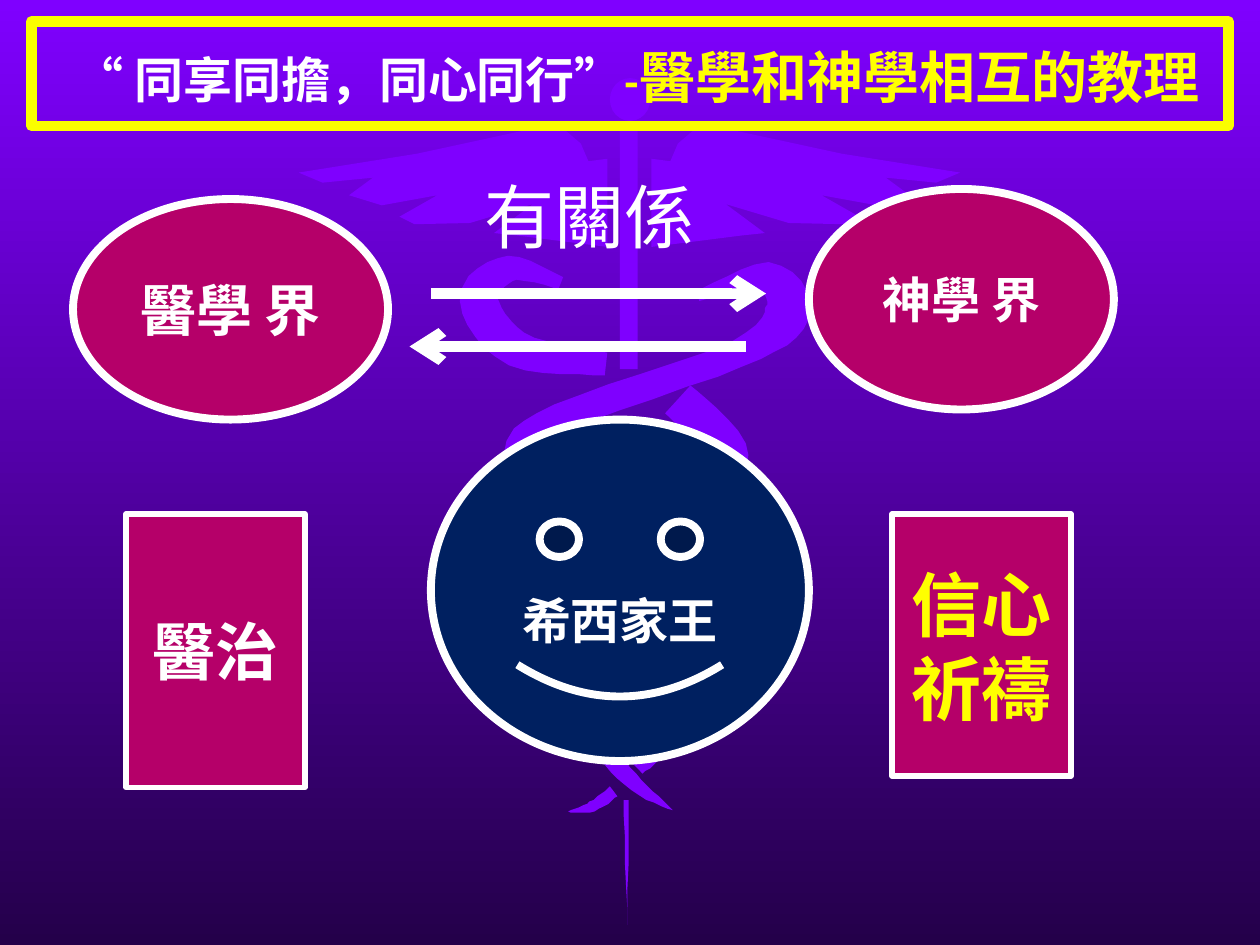
import math

import pptx
import pptx.dml.color
import pptx.enum.shapes
import pptx.enum.text
import pptx.oxml
import pptx.oxml.ns
import pptx.util
from pptx.util import Inches

FONT = "Cambria"
WHITE, YELLOW, PURPLE = "FFFFFF", "FFFF00", "7F00FF"
MAGENTA, NAVY = "B50069", "002060"
OVAL = pptx.enum.shapes.MSO_SHAPE.OVAL
RECTANGLE = pptx.enum.shapes.MSO_SHAPE.RECTANGLE
SMILEY = pptx.enum.shapes.MSO_SHAPE.SMILEY_FACE

# Emblem, in hundredths of an inch; bands are (x, y, thickness) along a centre line
STAFF = [
    [(499, 102, 15), (499, 293, 15)],
    [(499, 332, 14), (499, 390, 13)],
    [(497, 436, 14), (497, 473, 12)],
    [(497, 635, 5), (498, 734, 0)],
]
SNAKES = [
    [(445, 225, 10), (405, 213, 20), (380, 238, 30), (410, 277, 28), (481, 289, 18)],
    [(554, 235, 8), (608, 220, 24), (625, 248, 36), (585, 281, 22),
     (445, 332, 24), (417, 365, 32), (465, 401, 16)],
    [(538, 317, 30), (577, 358, 32), (560, 390, 24), (455, 430, 28),
     (436, 460, 28), (510, 505, 24), (530, 530, 20), (505, 557, 16)],
    [(478, 505, 18), (457, 530, 20), (500, 571, 18), (521, 591, 15), (506, 610, 12)],
    [(485, 573, 14), (480, 593, 16), (505, 623, 12), (534, 643, 1)],
    [(487, 628, 10), (470, 640, 8), (451, 644, 1)],
]
LEFT_WING = [
    (482, 196), (411, 187), (392, 185), (423, 162), (373, 177), (329, 178), (317, 172),
    (347, 155), (303, 163), (277, 155), (296, 141), (256, 145), (237, 137), (331, 122),
    (428, 101), (447, 102), (461, 114), (467, 128), (482, 126),
]
RIGHT_WING = [(999 - x, y) for x, y in LEFT_WING]


def color(hex_string):
    return pptx.dml.color.RGBColor.from_string(hex_string)


def style_shape(shape, fill=None, line=None, width=0):
    shape.shadow.inherit = False
    if fill:
        shape.fill.solid()
        shape.fill.fore_color.rgb = color(fill)
    else:
        shape.fill.background()
    if line:
        shape.line.color.rgb = color(line)
        shape.line.width = pptx.util.Pt(width)
    else:
        shape.line.fill.background()


def set_font(font, size, hex_string=WHITE, bold=True):
    font.name = FONT
    font.size = pptx.util.Pt(size)
    font.bold = bold
    font.color.rgb = color(hex_string)


def paint_background(slide):
    fill = slide.background.fill
    fill.gradient()
    fill.gradient_angle = 270
    for stop, hex_string, position in zip(fill.gradient_stops, (PURPLE, "24004A"), (0, 1)):
        stop.color.rgb = color(hex_string)
        stop.position = position


def smooth(knots, steps=6):
    """Points of a Catmull-Rom curve through the knots."""
    padded = [knots[0], *knots, knots[-1]]
    curve = []
    for a, b, c, d in zip(padded, padded[1:], padded[2:], padded[3:]):
        for step in range(steps):
            t = step / steps
            curve.append([
                q + t * (r - p) / 2 + t * t * (2 * p - 5 * q + 4 * r - s) / 2
                + t ** 3 * (3 * q - p - 3 * r + s) / 2
                for p, q, r, s in zip(a, b, c, d)])
    return curve + [list(knots[-1])]


def band_outline(knots):
    curve = smooth(knots)
    left, right = [], []
    for before, (x, y, thickness), after in zip([curve[0]] + curve, curve, curve[1:] + [curve[-1]]):
        angle = math.atan2(after[1] - before[1], after[0] - before[0])
        dx, dy = -math.sin(angle) * thickness / 2, math.cos(angle) * thickness / 2
        left.append((x + dx, y + dy))
        right.append((x - dx, y - dy))
    return left + right[::-1]


def add_emblem(slide):
    """Winged staff with two snakes behind the content."""
    for points in [*map(band_outline, STAFF + SNAKES), LEFT_WING, RIGHT_WING]:
        builder = slide.shapes.build_freeform(*points[0], scale=Inches(0.01))
        builder.add_line_segments(points[1:], close=True)
        style_shape(builder.convert_to_shape(), PURPLE)
    knob = slide.shapes.add_shape(OVAL, Inches(4.84), Inches(0.62), Inches(0.32), Inches(0.34))
    style_shape(knob, PURPLE)


def add_title(slide, runs):
    shape = slide.shapes.add_shape(RECTANGLE, Inches(0.25), Inches(0.17), Inches(9.5), Inches(0.83))
    style_shape(shape, line="FAFD00", width=6)
    shape.text_frame.vertical_anchor = pptx.enum.text.MSO_ANCHOR.MIDDLE
    paragraph = shape.text_frame.paragraphs[0]
    paragraph.alignment = pptx.enum.text.PP_ALIGN.CENTER
    for text, size, hex_string in runs:
        run = paragraph.add_run()
        run.text = text
        set_font(run.font, size, hex_string)


def add_label(slide, text, left, top):
    box = slide.shapes.add_textbox(Inches(left), Inches(top), Inches(1.88), Inches(0.77))
    box.text_frame.word_wrap = False
    paragraph = box.text_frame.paragraphs[0]
    paragraph.text = text
    set_font(paragraph.font, 40, bold=False)


def add_figure(slide, kind, bounds, text, size, width, fill=MAGENTA, text_color=WHITE, top_inset=0.05):
    shape = slide.shapes.add_shape(kind, *map(Inches, bounds))
    style_shape(shape, fill, WHITE, width)
    frame = shape.text_frame
    frame.word_wrap = True
    frame.vertical_anchor = pptx.enum.text.MSO_ANCHOR.MIDDLE
    frame.margin_top = Inches(top_inset)
    paragraph = frame.paragraphs[0]
    paragraph.text = text
    paragraph.alignment = pptx.enum.text.PP_ALIGN.CENTER
    set_font(paragraph.font, size, text_color)


def add_arrow(slide, start_x, end_x, y):
    connector = slide.shapes.add_connector(
        pptx.enum.shapes.MSO_CONNECTOR.STRAIGHT, Inches(start_x), Inches(y), Inches(end_x), Inches(y))
    connector.line.color.rgb = color(WHITE)
    connector.line.width = pptx.util.Pt(6)
    namespace = pptx.oxml.ns.nsdecls("a")
    properties = connector._element.spPr
    line = properties.find(pptx.oxml.ns.qn("a:ln"))
    line.append(pptx.oxml.parse_xml(f'<a:tailEnd {namespace} type="arrow"/>'))
    properties.append(pptx.oxml.parse_xml(f"<a:effectLst {namespace}/>"))


def main():
    presentation = pptx.Presentation()
    presentation.slide_width, presentation.slide_height = Inches(10), Inches(7.5)
    slide = presentation.slides.add_slide(presentation.slide_layouts[6])
    paint_background(slide)
    add_emblem(slide)
    add_title(slide, [(" ", 36, WHITE), ("“ 同享同擔，同心同行”", 28, WHITE),
                      ("-", 28, YELLOW), ("醫學和神學相互的教理", 32, YELLOW)])
    add_label(slide, "有關係", 3.75, 1.33)
    add_figure(slide, OVAL, (0.58, 1.58, 2.5, 1.75), "醫學 界", 32, 4.5)
    add_figure(slide, OVAL, (6.42, 1.5, 2.42, 1.75), "神學 界", 28, 4.5)
    add_arrow(slide, 3.42, 6.08, 2.33)
    add_arrow(slide, 5.92, 3.25, 2.75)
    add_figure(slide, RECTANGLE, (1, 4.08, 1.42, 2.17), "醫治", 36, 3)
    add_figure(slide, RECTANGLE, (7.08, 4.08, 1.42, 2.08), "信心 祈禱", 40, 3, text_color=YELLOW)
    add_figure(slide, SMILEY, (3.42, 3.33, 3, 2.71), "希西家王", 28, 4.5, NAVY, top_inset=0.52)
    presentation.save("out.pptx")


if __name__ == "__main__":
    main()
